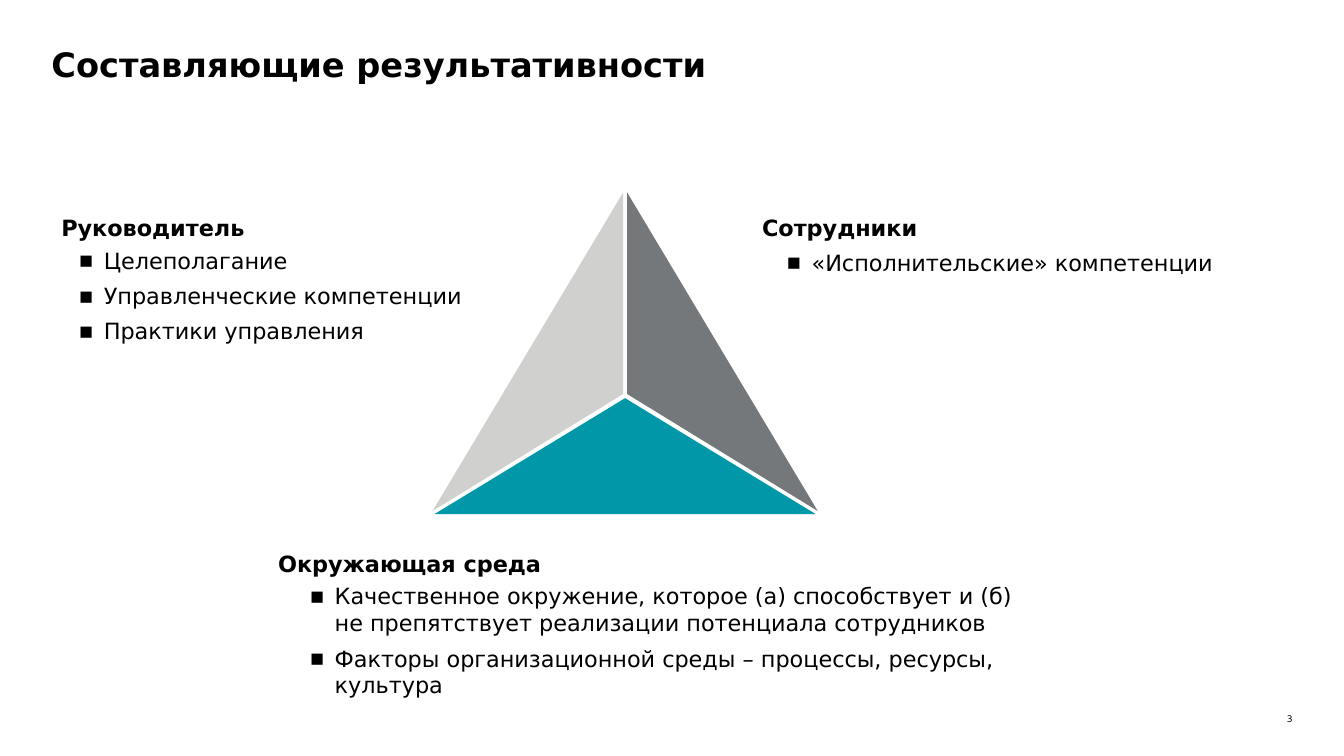
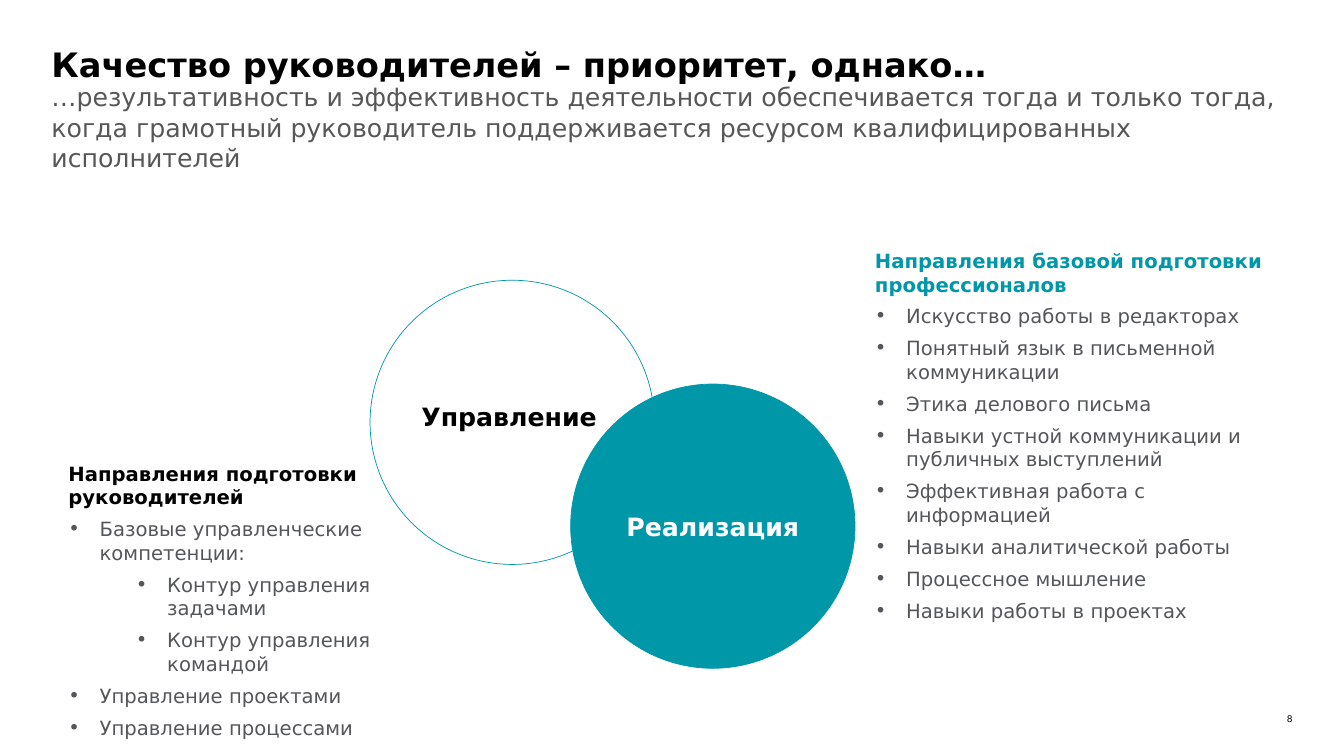
from dataclasses import dataclass, replace
from typing import Sequence

import lxml.etree
import pptx
import pptx.dml.color
import pptx.enum.shapes
import pptx.enum.text
import pptx.oxml.ns
import pptx.slide
import pptx.util

# Scale: 100 px to the inch
PX = 9144
SLIDE_W, SLIDE_H = 1333, 750
MARGIN, CONTENT_W = 51, 1231

# Palette and font
FONT = "DejaVu Sans"
BLACK, WHITE, TEAL = "000000", "FFFFFF", "0097A9"
SUBTITLE_GREY, BODY_GREY = "575757", "53565A"
DARK_FACET, LIGHT_FACET = "75787B", "D0D0CE"

LEFT = pptx.enum.text.PP_ALIGN.LEFT
CENTER = pptx.enum.text.PP_ALIGN.CENTER
RIGHT = pptx.enum.text.PP_ALIGN.RIGHT
TOP = pptx.enum.text.MSO_ANCHOR.TOP
MIDDLE = pptx.enum.text.MSO_ANCHOR.MIDDLE


@dataclass(frozen=True)
class Style:
    size: float
    color: str = BLACK
    bold: bool = False
    align: pptx.enum.text.PP_ALIGN = LEFT
    after: float = 0
    spacing: float = 1.0
    bullet: str = ""
    margin: int = 0
    hanging: int = 0
    level: int = 0


@dataclass(frozen=True)
class Line:
    text: str
    style: Style


@dataclass(frozen=True)
class Box:
    left: int
    top: int
    width: int
    height: int

    def emu(self) -> list[int]:
        return [v * PX for v in (self.left, self.top, self.width, self.height)]


@dataclass(frozen=True)
class Component:
    heading: str
    heading_box: Box
    points: tuple[str, ...]
    points_box: Box


@dataclass(frozen=True)
class Facet:
    color: str
    corners: tuple[tuple[int, int], ...]


@dataclass(frozen=True)
class Circle:
    label: str
    label_box: Box
    label_color: str
    left: int
    top: int
    fill: str


# Text styles
TITLE = Style(24, bold=True)
SUBTITLE = Style(18, SUBTITLE_GREY, after=13.3)
PAGE_NUMBER = Style(6.5, align=RIGHT)
COMPONENT_HEADING = Style(16, bold=True, spacing=1.06)
COMPONENT_POINT = Style(16, after=6, bullet="▪", margin=25, hanging=25)
CIRCLE_LABEL = Style(18, bold=True, align=CENTER)
TRAINING_HEADING = Style(14, bold=True, after=6)
TRAINING_POINT = Style(14, BODY_GREY, after=6, bullet="•", margin=31, hanging=31)
TRAINING_SUBPOINT = replace(TRAINING_POINT, margin=98, level=1)


def rgb(color: str) -> pptx.dml.color.RGBColor:
    return pptx.dml.color.RGBColor.from_string(color)


def add_child(parent, tag: str, **attributes: str) -> None:
    lxml.etree.SubElement(parent, pptx.oxml.ns.qn(tag), attributes)


def write_lines(shape, lines: Sequence[Line], inset: tuple[int, int],
                anchor=TOP) -> None:
    frame = shape.text_frame
    frame.word_wrap = True
    frame.vertical_anchor = anchor
    frame.margin_left = frame.margin_right = inset[0] * PX
    frame.margin_top = frame.margin_bottom = inset[1] * PX
    for index, line in enumerate(lines):
        paragraph = frame.paragraphs[0] if index == 0 else frame.add_paragraph()
        paragraph.text = line.text
        style = line.style
        paragraph.level = style.level
        paragraph.alignment = style.align
        paragraph.line_spacing = style.spacing
        paragraph.space_after = pptx.util.Pt(style.after)
        if style.bullet:
            props = paragraph._p.get_or_add_pPr()
            props.set("marL", str(style.margin * PX))
            props.set("indent", str(-style.hanging * PX))
            add_child(props, "a:buFont", typeface=FONT)
            add_child(props, "a:buChar", char=style.bullet)
        font = paragraph.font
        font.name = FONT
        font.size = pptx.util.Pt(style.size)
        font.bold = style.bold
        font.color.rgb = rgb(style.color)


def add_text(slide: pptx.slide.Slide, box: Box, lines: Sequence[Line],
             inset: tuple[int, int] = (0, 0), anchor=TOP) -> None:
    write_lines(slide.shapes.add_textbox(*box.emu()), lines, inset, anchor)


def paint(shape, fill: str, line: str = "") -> None:
    shape.shadow.inherit = False
    if fill:
        shape.fill.solid()
        shape.fill.fore_color.rgb = rgb(fill)
    else:
        shape.fill.background()
    if line:
        shape.line.color.rgb = rgb(line)
        shape.line.width = pptx.util.Pt(0.5)
    else:
        shape.line.fill.background()


def add_panel(slide: pptx.slide.Slide, box: Box, lines: Sequence[Line]) -> None:
    rectangle = pptx.enum.shapes.MSO_SHAPE.RECTANGLE
    panel = slide.shapes.add_shape(rectangle, *box.emu())
    paint(panel, WHITE)
    # Half-transparent fill
    fill_color = panel._element.spPr.find(
        "/".join(map(pptx.oxml.ns.qn, ("a:solidFill", "a:srgbClr"))))
    add_child(fill_color, "a:alpha", val="50000")
    write_lines(panel, lines, (10, 5))


def add_slide(deck, title: str, number: int) -> pptx.slide.Slide:
    slide = deck.slides.add_slide(deck.slide_layouts[6])
    add_text(slide, Box(1248, 708, 34, 11), [Line(str(number), PAGE_NUMBER)])
    add_text(slide, Box(MARGIN, 44, CONTENT_W, 37), [Line(title, TITLE)])
    return slide


def add_component(slide: pptx.slide.Slide, part: Component) -> None:
    add_text(slide, part.heading_box, [Line(part.heading, COMPONENT_HEADING)],
             (10, 10), MIDDLE)
    add_text(slide, part.points_box, [Line(p, COMPONENT_POINT) for p in part.points])


def add_facet(slide: pptx.slide.Slide, facet: Facet) -> None:
    start, *rest = facet.corners
    builder = slide.shapes.build_freeform(*start, scale=PX)
    builder.add_line_segments(rest, close=True)
    paint(builder.convert_to_shape(), facet.color)


def add_circle(slide: pptx.slide.Slide, circle: Circle) -> None:
    oval = pptx.enum.shapes.MSO_SHAPE.OVAL
    box = Box(circle.left, circle.top, 282, 282)
    paint(slide.shapes.add_shape(oval, *box.emu()), circle.fill, TEAL)


def add_circle_label(slide: pptx.slide.Slide, circle: Circle) -> None:
    style = replace(CIRCLE_LABEL, color=circle.label_color)
    add_text(slide, circle.label_box, [Line(circle.label, style)], (4, 4))


# Slide content: components of performance
COMPONENTS = (
    Component("Руководитель", Box(51, 205, 296, 39),
              ("Целеполагание", "Управленческие компетенции", "Практики управления"),
              Box(78, 245, 416, 98)),
    Component("Сотрудники", Box(746, 194, 467, 62),
              ("«Исполнительские» компетенции",),
              Box(780, 247, 485, 27)),
    Component("Окружающая среда", Box(266, 528, 296, 61),
              ("Качественное окружение, которое (а) способствует и (б) "
               "не препятствует реализации потенциала сотрудников",
               "Факторы организационной среды – процессы, ресурсы, культура"),
              Box(307, 578, 717, 116)),
)

AXIS = 620
FACETS = (
    Facet(DARK_FACET, ((AXIS + 191, 507), (AXIS + 2, 391), (AXIS + 2, 191))),
    Facet(LIGHT_FACET, ((AXIS - 191, 507), (AXIS - 2, 391), (AXIS - 2, 191))),
)
BASE_FACET = Box(AXIS - 189, 395, 378, 115)

# Slide content: training of managers and professionals
MANAGEMENT = Circle("Управление", Box(371, 394, 268, 38), BLACK, 367, 278, "")
DELIVERY = Circle("Реализация", Box(561, 503, 292, 38), WHITE, 566, 381, TEAL)

MANAGER_TRAINING = (
    Line("Направления подготовки руководителей", TRAINING_HEADING),
    Line("Базовые управленческие компетенции:", TRAINING_POINT),
    Line("Контур управления задачами", TRAINING_SUBPOINT),
    Line("Контур управления командой", TRAINING_SUBPOINT),
    Line("Управление проектами", TRAINING_POINT),
    Line("Управление процессами", TRAINING_POINT),
)
PROFESSIONAL_TRAINING = (
    Line("Направления базовой подготовки профессионалов",
         replace(TRAINING_HEADING, color=TEAL)),
    *(Line(topic, TRAINING_POINT) for topic in (
        "Искусство работы в редакторах",
        "Понятный язык в письменной коммуникации",
        "Этика делового письма",
        "Навыки устной коммуникации и публичных выступлений",
        "Эффективная работа с информацией",
        "Навыки аналитической работы",
        "Процессное мышление",
        "Навыки работы в проектах",
    )),
)


def build_components_slide(deck) -> None:
    slide = add_slide(deck, "Составляющие результативности", 3)
    for component in COMPONENTS:
        add_component(slide, component)
    for facet in FACETS:
        add_facet(slide, facet)
    triangle = pptx.enum.shapes.MSO_SHAPE.ISOSCELES_TRIANGLE
    paint(slide.shapes.add_shape(triangle, *BASE_FACET.emu()), TEAL)


def build_training_slide(deck) -> None:
    slide = add_slide(deck, "Качество руководителей – приоритет, однако…", 8)
    subtitle = ("…результативность и эффективность деятельности обеспечивается "
                "тогда и только тогда, когда грамотный руководитель "
                "поддерживается ресурсом квалифицированных исполнителей")
    add_text(slide, Box(MARGIN, 81, CONTENT_W, 83), [Line(subtitle, SUBTITLE)])
    add_panel(slide, Box(58, 453, 419, 241), MANAGER_TRAINING)
    for circle in (MANAGEMENT, DELIVERY):
        add_circle(slide, circle)
    for circle in (MANAGEMENT, DELIVERY):
        add_circle_label(slide, circle)
    add_panel(slide, Box(858, 242, 417, 384), PROFESSIONAL_TRAINING)


def main() -> None:
    deck = pptx.Presentation()
    deck.slide_width, deck.slide_height = SLIDE_W * PX, SLIDE_H * PX
    build_components_slide(deck)
    build_training_slide(deck)
    deck.save("out.pptx")


if __name__ == "__main__":
    main()
